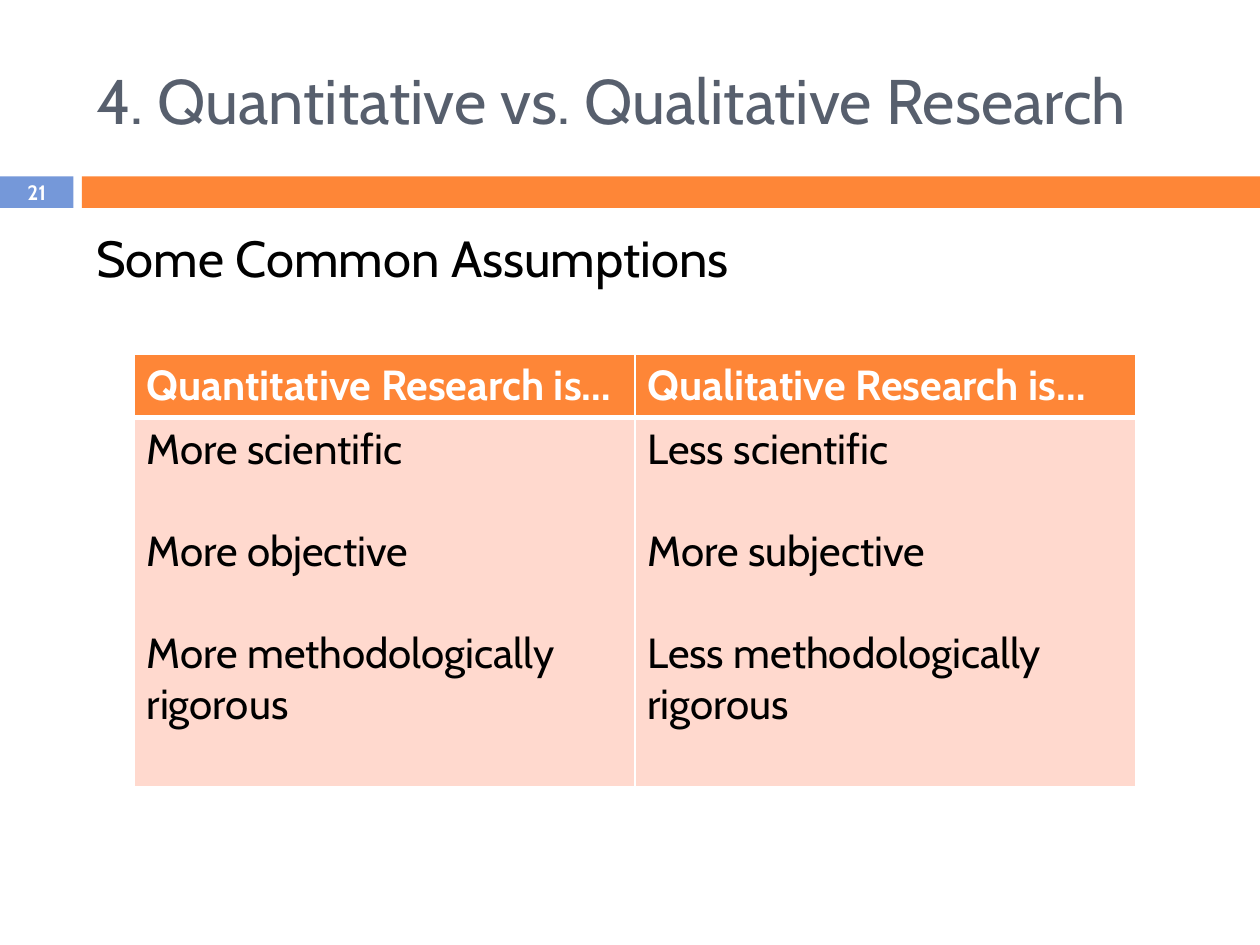
from dataclasses import dataclass

from lxml import etree
from pptx import Presentation
from pptx.dml.color import RGBColor
from pptx.enum.shapes import MSO_SHAPE
from pptx.enum.text import MSO_ANCHOR, PP_ALIGN
from pptx.oxml.ns import qn
from pptx.util import Pt

RECTANGLE = MSO_SHAPE.RECTANGLE
TOP, MIDDLE = MSO_ANCHOR.TOP, MSO_ANCHOR.MIDDLE
LEFT, CENTER = PP_ALIGN.LEFT, PP_ALIGN.CENTER


@dataclass(frozen=True)
class Theme:
    font: str = "Cabin"
    slate: str = "575F6D"
    black: str = "000000"
    white: str = "FFFFFF"
    orange: str = "FE8637"
    blue: str = "7598D9"
    blush: str = "FFD9CE"
    title_size: float = 36
    subtitle_size: float = 29
    table_size: float = 24
    number_size: float = 11.9


THEME = Theme()
COLUMNS = {
    "Quantitative Research is…": [
        "More scientific",
        "More objective",
        "More methodologically rigorous",
    ],
    "Qualitative Research is…": [
        "Less scientific",
        "More subjective",
        "Less methodologically rigorous",
    ],
}


def write(paragraph, text, size, color, bold=False):
    run = paragraph.add_run()
    run.text = text
    formats = {"name": THEME.font, "size": Pt(size), "bold": bold}
    for attribute, value in formats.items():
        setattr(run.font, attribute, value)
    run.font.color.rgb = RGBColor.from_string(color)


def add_label(slide, box, text, size, color, bold=False,
              anchor=MIDDLE, align=LEFT, before=0):
    frame = slide.shapes.add_textbox(*map(Pt, box)).text_frame
    frame.word_wrap = True
    frame.vertical_anchor = anchor
    paragraph = frame.paragraphs[0]
    paragraph.alignment = align
    paragraph.space_before = Pt(before)
    write(paragraph, text, size, color, bold)


def add_bar(slide, box, color):
    bar = slide.shapes.add_shape(RECTANGLE, *map(Pt, box))
    bar.shadow.inherit = False
    bar.fill.solid()
    bar.fill.fore_color.rgb = RGBColor.from_string(color)
    bar.line.fill.background()


def add_number_band(slide, box, number):
    left, top, width, height = box
    number_width, gap = 42, 4.8
    bar_left = left + number_width + gap
    add_bar(slide, (left, top, number_width, height), THEME.blue)
    add_bar(slide, (bar_left, top, left + width - bar_left, height), THEME.orange)
    add_label(slide, (left, top - 0.7, number_width, height + 1.4), number,
              THEME.number_size, THEME.white, bold=True, align=CENTER)


def set_borders(cell, widths):
    """Draw white cell edges; widths are in left, right, top, bottom order."""
    properties = cell._tc.get_or_add_tcPr()
    for index, (edge, width) in enumerate(zip("LRTB", widths)):
        line = etree.Element(qn(f"a:ln{edge}"), w=str(Pt(width)))
        fill = etree.SubElement(line, qn("a:solidFill"))
        etree.SubElement(fill, qn("a:srgbClr"), val=THEME.white)
        properties.insert(index, line)


def fill_cell(cell, lines, fill, color, bold, widths, gap=0):
    cell.fill.solid()
    cell.fill.fore_color.rgb = RGBColor.from_string(fill)
    set_borders(cell, widths)
    frame = cell.text_frame
    for index, line in enumerate(lines):
        paragraph = frame.add_paragraph() if index else frame.paragraphs[0]
        paragraph.space_before = Pt(gap if index else 0)
        write(paragraph, line, THEME.table_size, color, bold)


def add_comparison(slide, box, columns):
    header_height, line_gap = 36.4, 29.2
    table = slide.shapes.add_table(2, len(columns), *map(Pt, box)).table
    table.rows[0].height = Pt(header_height)
    table.rows[1].height = Pt(box[3] - header_height)
    for index, (heading, claims) in enumerate(columns.items()):
        fill_cell(table.cell(0, index), [heading], THEME.orange, THEME.white,
                  True, (1, 1, 1, 3))
        fill_cell(table.cell(1, index), claims, THEME.blush, THEME.black,
                  False, (1, 1, 3, 1), line_gap)


def main():
    deck = Presentation()
    deck.slide_width, deck.slide_height = Pt(720), Pt(540)
    slide = deck.slides.add_slide(deck.slide_layouts[6])

    # Band with slide number
    add_number_band(slide, (0, 100.8, 720, 18), "21")

    # Title and subtitle
    add_label(slide, (48, 18, 642, 78), "4. Quantitative vs. Qualitative Research",
              THEME.title_size, THEME.slate)
    add_label(slide, (48, 126, 642, 354), "Some Common Assumptions",
              THEME.subtitle_size, THEME.black, anchor=TOP, before=7)

    # Comparison table
    add_comparison(slide, (76.6, 202.2, 572.4, 247.2), COLUMNS)

    deck.save("out.pptx")


if __name__ == "__main__":
    main()
